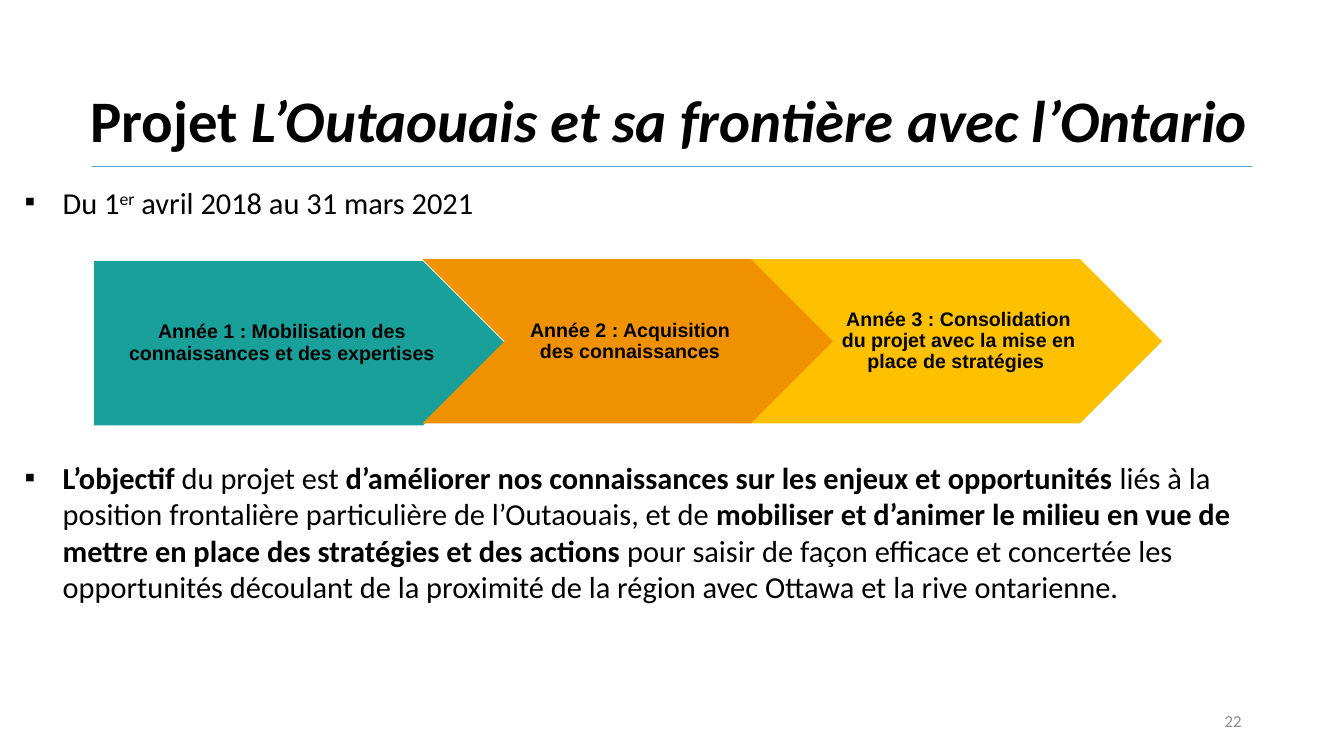
from lxml import etree
from pptx import Presentation
from pptx.dml.color import RGBColor
from pptx.enum.shapes import MSO_CONNECTOR as CONN, MSO_SHAPE as SHAPE
from pptx.enum.text import MSO_ANCHOR as ANCHOR, PP_ALIGN as ALIGN
from pptx.oxml.ns import qn
from pptx.util import Cm, Pt

COLORS = {"text": "000000", "rule": "5B9BD5", "number": "8C8C8C",
          "year1": "19A09B", "year2": "F09100", "year3": "FFC000"}


class SlideBuilder:
    def __init__(self, prs):
        self.s = prs.slides.add_slide(prs.slide_layouts[6])

    def color(self, name):
        return RGBColor.from_string(COLORS[name])

    def run(self, p, text, size, font="Calibri", color="text",
            bold=False, italic=False, raised=False):
        r = p.add_run()
        r.text = text
        f = r.font
        f.name, f.size, f.bold, f.italic = font, Pt(size), bold, italic
        f.color.rgb = self.color(color)
        if raised:
            r._r.get_or_add_rPr().set("baseline", "30000")

    def text_box(self, x, y, w, h, anchor=ANCHOR.MIDDLE):
        """Add a wrapping text box and return its first paragraph."""
        tf = self.s.shapes.add_textbox(Cm(x), Cm(y), Cm(w), Cm(h)).text_frame
        tf.word_wrap = True
        tf.vertical_anchor = anchor
        return tf.paragraphs[0]

    def bullet_box(self, y, h):
        """Add a text box whose paragraph has a square bullet and hanging indent."""
        p = self.text_box(0.37, y, 31.47, h, ANCHOR.TOP)
        pPr = p._p.get_or_add_pPr()
        pPr.set("marL", str(Cm(0.96)))
        pPr.set("indent", str(-Cm(0.96)))
        etree.SubElement(pPr, qn("a:buFont")).set("typeface", "Arial")
        etree.SubElement(pPr, qn("a:buChar")).set("char", "▪")
        return p

    def rule(self, x1, x2, y):
        c = self.s.shapes.add_connector(CONN.STRAIGHT, Cm(x1), Cm(y), Cm(x2), Cm(y))
        c.line.color.rgb = self.color("rule")
        c.line.width = Pt(0.5)
        etree.SubElement(c._element.spPr, qn("a:effectLst"))

    def arrow(self, kind, x, y, text, fill, left_inset):
        sp = self.s.shapes.add_shape(kind, Cm(x), Cm(y), Cm(10.36), Cm(4.14))
        sp.shadow.inherit = False
        sp.fill.solid()
        sp.fill.fore_color.rgb = self.color(fill)
        sp.line.fill.background()
        tf = sp.text_frame
        tf.word_wrap = True
        tf.vertical_anchor = ANCHOR.MIDDLE
        tf.margin_left, tf.margin_right = Cm(left_inset), Cm(0.05)
        tf.margin_top = tf.margin_bottom = Cm(0.1)
        p = tf.paragraphs[0]
        p.alignment = ALIGN.CENTER
        p.line_spacing = 0.9
        self.run(p, text, 14, font="Arial", bold=True)


def main():
    prs = Presentation()
    prs.slide_width, prs.slide_height = Cm(33.87), Cm(19.05)
    b = SlideBuilder(prs)

    b.rule(2.33, 31.55, 4.2)
    title = b.text_box(2.03, 2.1, 31.47, 2)
    title.line_spacing = 0.9
    b.run(title, "Projet ", 42, bold=True)
    b.run(title, "L’Outaouais et sa frontière avec l’Ontario", 42, bold=True, italic=True)

    dates = b.bullet_box(4.77, 1.3)
    dates.line_spacing = 0.7
    b.run(dates, "Du 1", 21.7)
    b.run(dates, "er", 21.7, raised=True)
    b.run(dates, " avril 2018 au 31 mars 2021", 21.7)

    goal = b.bullet_box(11.44, 4.13)
    for text, bold in [
        ("L’objectif ", True),
        ("du projet est ", False),
        ("d’améliorer nos connaissances sur les enjeux et opportunités ", True),
        ("liés à la position frontalière particulière de l’Outaouais, et de ", False),
        ("mobiliser et d’animer le milieu en vue de mettre en place des stratégies "
         "et des actions ", True),
        ("pour saisir de façon efficace et concertée les opportunités découlant de "
         "la proximité de la région avec Ottawa et la rive ontarienne.", False),
    ]:
        b.run(goal, text, 21.7, bold=bold)

    years = [
        (SHAPE.PENTAGON, 6.58, "Année 1 : Mobilisation des connaissances et des expertises",
         "year1", 0.2),
        (SHAPE.CHEVRON, 6.53, "Année 2 : Acquisition des connaissances", "year2", 0.15),
        (SHAPE.CHEVRON, 6.53, "Année 3 : Consolidation du projet avec la mise en place "
         "de stratégies ", "year3", 0.15),
    ]
    for i, (kind, y, text, fill, inset) in enumerate(years):
        b.arrow(kind, 2.37 + 8.28 * i, y, text, fill, inset)

    number = b.text_box(23.92, 17.65, 7.62, 1.02)
    number.alignment = ALIGN.RIGHT
    b.run(number, "22", 12, color="number")

    prs.save("out.pptx")


if __name__ == "__main__":
    main()
